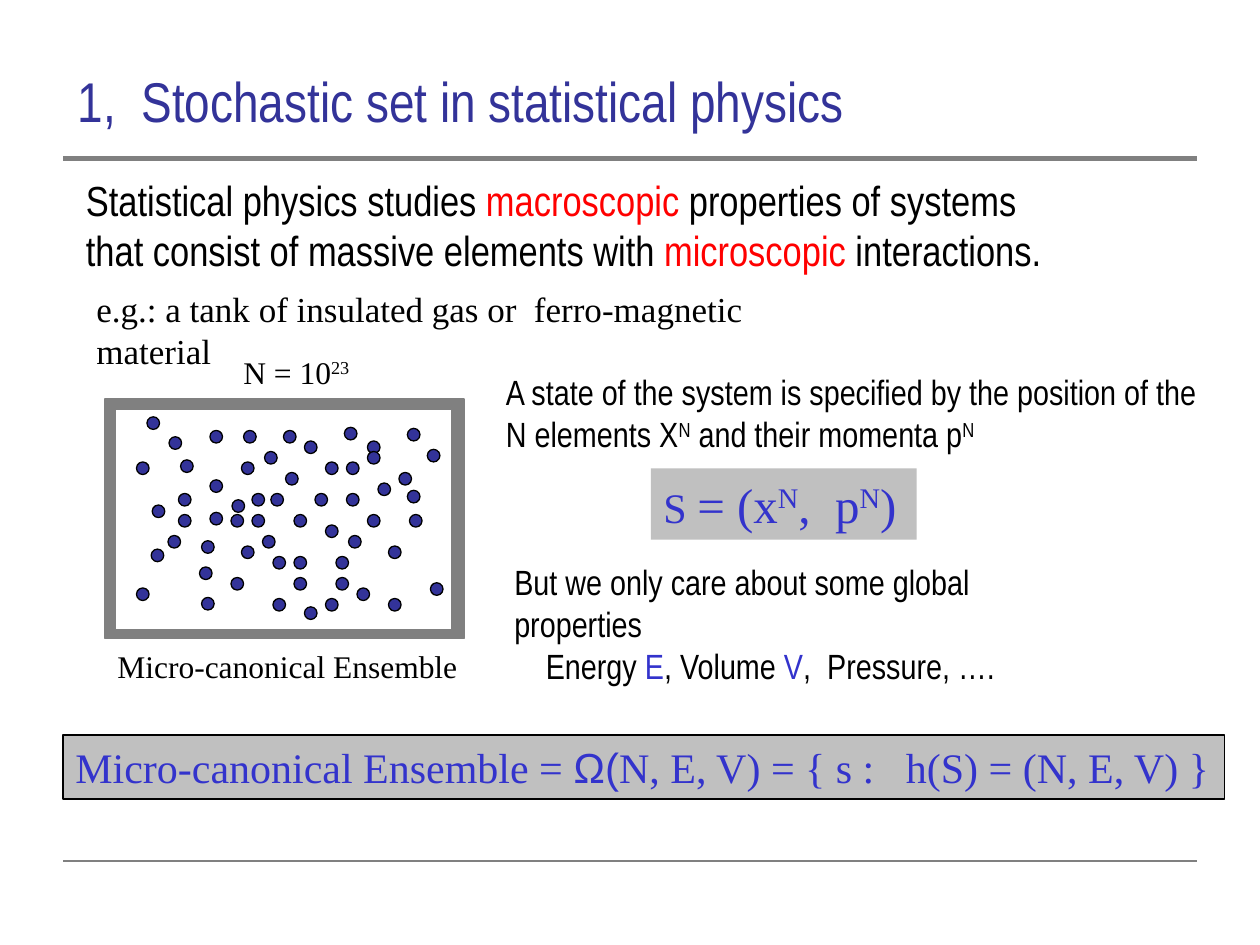
from lxml import etree
from pptx import Presentation
from pptx import util as u
from pptx.dml.color import RGBColor
from pptx.enum import shapes, text
from pptx.oxml.ns import qn

CELL = u.Inches(10) // 120
NAVY = RGBColor(0x33, 0x33, 0x99)
BLUE = RGBColor(0x33, 0x33, 0xCC)
RED = RGBColor(0xFF, 0x00, 0x00)
BLACK = RGBColor(0x00, 0x00, 0x00)
WHITE = RGBColor(0xFF, 0xFF, 0xFF)
GREY = RGBColor(0x80, 0x80, 0x80)
SILVER = RGBColor(0xC0, 0xC0, 0xC0)
NARROW, SERIF, SANS = "Arial Narrow", "Times New Roman", "Arial"
SUPER = {"raised": True}

PARTICLE_SIZE = 1.2
PARTICLE_ROWS = {
    39.7: [14], 40.7: [32.8], 40.8: [38.8], 41: [20, 23.2, 27],
    41.6: [16.1], 42: [29, 35], 42.8: [40.7], 43: [25.2, 35],
    43.8: [17.2], 44: [13, 23, 31, 33], 45: [27.2, 38], 45.7: [20],
    46: [36], 46.7: [38.8], 47: [17, 24, 25.8, 30, 33], 47.6: [22.1],
    48.1: [14.5], 48.8: [20], 49: [17, 22, 24, 28, 35, 39], 50: [31],
    51: [16, 25, 33.2], 51.5: [19.2], 52: [23, 37], 52.3: [14.4],
    53: [26, 28, 32], 54: [19], 55: [22, 28, 32], 55.5: [41],
    56: [13, 34], 56.9: [19.2], 57: [26, 31, 37], 57.8: [29],
}


def cells(*counts):
    """Turn counts of grid cells into lengths."""
    return [round(count * CELL) for count in counts]


def add_rule(slide, row, weight):
    """Draw a grey rule across the slide between its side margins."""
    rule = slide.shapes.add_connector(
        shapes.MSO_CONNECTOR.STRAIGHT, *cells(6, row, 114, row))
    rule.line.color.rgb = GREY
    rule.line.width = u.Pt(weight)
    etree.SubElement(rule._element.spPr, qn("a:effectLst"))


def add_figure(slide, kind, area, fill, outline=None):
    """Draw a filled preset shape, with a thin outline if a colour is given."""
    figure = slide.shapes.add_shape(kind, *cells(*area))
    figure.shadow.inherit = False
    figure.fill.solid()
    figure.fill.fore_color.rgb = fill
    if outline is None:
        figure.line.fill.background()
    else:
        figure.line.color.rgb = outline
        figure.line.width = u.Pt(0.75)
    return figure


def write(holder, *paragraphs, font=SERIF, size=20, color=BLACK, wrap=True,
          anchor=text.MSO_ANCHOR.TOP, indents=()):
    """Fill a shape with paragraphs of (wording, format overrides) runs."""
    frame = holder.text_frame
    frame.word_wrap = wrap
    frame.vertical_anchor = anchor
    for index, pieces in enumerate(paragraphs):
        paragraph = frame.add_paragraph() if index else frame.paragraphs[0]
        paragraph.alignment = text.PP_ALIGN.LEFT
        if index < len(indents):
            paragraph._p.get_or_add_pPr().set("marL", str(cells(indents[index])[0]))
        for wording, override in pieces:
            run = paragraph.add_run()
            run.text = wording
            run.font.name = override.get("font", font)
            run.font.size = u.Pt(override.get("size", size))
            run.font.color.rgb = override.get("color", color)
            if override.get("raised"):
                run.font._element.set("baseline", "30000")


def add_text(slide, area, *paragraphs, **style):
    """Place a plain text box on the grid."""
    write(slide.shapes.add_textbox(*cells(*area)), *paragraphs, **style)


def add_formula(slide, area, pieces, outline=None):
    """Place a formula on a silver panel."""
    panel = add_figure(slide, shapes.MSO_SHAPE.RECTANGLE, area, SILVER, outline)
    write(panel, pieces, size=24, color=BLUE, wrap=False)


def add_tank(slide):
    """Draw the walled tank and the gas particles in it."""
    box, dot = shapes.MSO_SHAPE.RECTANGLE, shapes.MSO_SHAPE.OVAL
    add_figure(slide, box, (10, 38, 34.2, 22.8), GREY, GREY)
    add_figure(slide, box, (11, 39, 32, 21), WHITE, GREY)
    for row, columns in PARTICLE_ROWS.items():
        for column in columns:
            add_figure(slide, dot, (column, row, PARTICLE_SIZE, PARTICLE_SIZE),
                       NAVY, BLACK)


def main():
    """Build the slide and save it."""
    deck = Presentation()
    deck.slide_width, deck.slide_height = cells(120, 90)
    slide = deck.slides.add_slide(deck.slide_layouts[6])

    add_rule(slide, 15.1, 3)
    add_rule(slide, 82, 0.75)
    add_text(slide, (5, 5, 93, 9),
             [(" 1,  Stochastic set in statistical physics", {})],
             font=NARROW, size=32, color=NAVY, anchor=text.MSO_ANCHOR.MIDDLE)
    add_text(slide, (7, 16, 94.6, 10.9),
             [("Statistical physics studies ", {}), ("macroscopic", {"color": RED}),
              (" properties of systems", {})],
             [("that consist of massive elements with ", {}),
              ("microscopic", {"color": RED}), (" interactions.", {})],
             font=NARROW, size=24)
    add_text(slide, (8, 26.8, 75.5, 5.2),
             [("e.g.: a tank of insulated gas or  ferro-magnetic material", {})])
    add_text(slide, (22, 33, 12.7, 4.8), [("N = 10", {}), ("23", SUPER)],
             size=18, wrap=False)
    add_text(slide, (10, 61, 34.8, 4.8), [("Micro-canonical Ensemble", {})],
             size=18, wrap=False)
    large, large_super = {"size": 28}, {"size": 28, "raised": True}
    add_formula(slide, (62, 44.6, 25.3, 6.8),
                [("S ", {}), ("= (x", large), ("N", large_super),
                 (",  p", large), ("N", large_super), (")", large)])
    add_tank(slide)
    add_formula(slide, (6, 70, 110.6, 6.1),
                [("Micro-canonical Ensemble = ", {}), ("Ω(", {"font": SANS}),
                 ("N, E, V) = { s :   h(S) = (N, E, V) }", {})], BLACK)
    add_text(slide, (47, 34.7, 70, 9.2),
             [("A state of the system is specified by the position of the "
               "N elements X", {}), ("N", SUPER),
              (" and their momenta p", {}), ("N", SUPER)], font=NARROW)
    add_text(slide, (47.8, 52.8, 58.6, 9.2),
             [("But we only care about some global properties", {})],
             [("Energy ", {}), ("E", {"color": BLUE}), (", Volume ", {}),
              ("V", {"color": BLUE}), (",  Pressure, ….", {})],
             font=NARROW, indents=(0, 3))
    deck.save("out.pptx")


if __name__ == "__main__":
    main()
